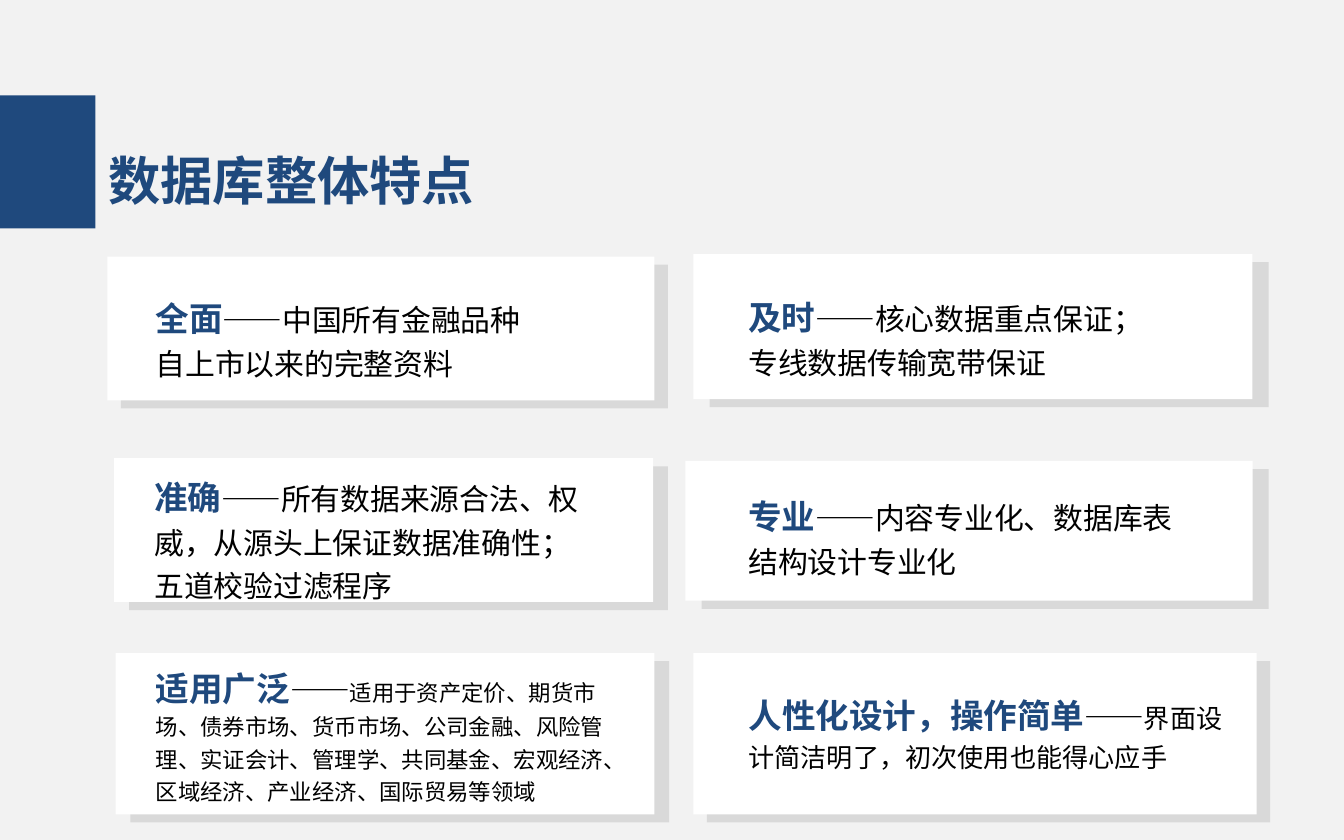
from lxml import etree
from pptx import Presentation, util as u
from pptx.dml.color import RGBColor
from pptx.enum import shapes, text
from pptx.oxml import ns

PX = u.Inches(1) // 100
FONT = "Noto Sans CJK SC"
NAVY = RGBColor(0x1F, 0x49, 0x7D)
BLACK = RGBColor(0, 0, 0)
WHITE = RGBColor(0xFF, 0xFF, 0xFF)
PALE = RGBColor(0xF2, 0xF2, 0xF2)
SHADE = RGBColor(0xD9, 0xD9, 0xD9)

deck = Presentation()
deck.slide_width, deck.slide_height = 1000 * PX, 625 * PX
page = deck.slides.add_slide(deck.slide_layouts[6])
page.background.fill.solid()
page.background.fill.fore_color.rgb = PALE


def add_block(left, top, width, height, color):
    block = page.shapes.add_shape(
        shapes.MSO_SHAPE.RECTANGLE, left * PX, top * PX, width * PX, height * PX
    )
    block.shadow.inherit = False
    block.fill.solid()
    block.fill.fore_color.rgb = color
    block.line.fill.background()


def add_words(left, top, width, height, spans):
    box = page.shapes.add_textbox(left * PX, top * PX, width * PX, height * PX)
    frame = box.text_frame
    frame.word_wrap = True
    frame.auto_size = text.MSO_AUTO_SIZE.SHAPE_TO_FIT_TEXT
    para = frame.paragraphs[0]
    para.line_spacing = 1.2
    for index, (words, size) in enumerate(spans):
        span = para.add_run()
        span.text = words
        span.font.size = u.Pt(size)
        span.font.bold = index == 0
        span.font.color.rgb = NAVY if index == 0 else BLACK
        span.font.name = FONT
        east_asian = etree.SubElement(span.font._element, ns.qn("a:ea"))
        east_asian.set("typeface", FONT)


add_block(0, 71, 71, 99, NAVY)
add_words(71, 96, 583, 67, [("数据库整体特点", 28)])

cards = [
    ((80, 191, 407, 107), 10, (106, 211, 307, 79),
     [("全面", 18), ("——中国所有金融品种自上市以来的完整资料", 16)]),
    ((516, 189, 416, 108), 12, (547, 210, 307, 79),
     [("及时", 18), ("——核心数据重点保证；专线数据传输宽带保证", 16)]),
    ((85, 341, 401, 107), 11, (105, 344, 339, 115),
     [("准确", 18),
      ("——所有数据来源合法、权威，从源头上保证数据准确性；五道校验过滤程序", 16)]),
    ((510, 343, 422, 104), 12, (547, 358, 346, 79),
     [("专业", 18), ("——内容专业化、数据库表结构设计专业化", 16)]),
    ((86, 486, 401, 120), 11, (106, 486, 362, 123),
     [("适用广泛", 18), ("——", 16),
      ("适用于资产定价、期货市场、债券市场、货币市场、公司金融、风险管理、实证会计、"
       "管理学、共同基金、宏观经济、区域经济、产业经济、国际贸易等领域", 12)]),
    ((516, 486, 419, 120), 10, (547, 506, 379, 75),
     [("人性化设计，操作简单", 18), ("——", 16),
      ("界面设计简洁明了，初次使用也能得心应手", 14)]),
]
for (left, top, width, height), shift, words_area, spans in cards:
    add_block(left + shift, top + 6, width, height, SHADE)
    add_block(left, top, width, height, WHITE)
    add_words(*words_area, spans)

deck.save("out.pptx")
